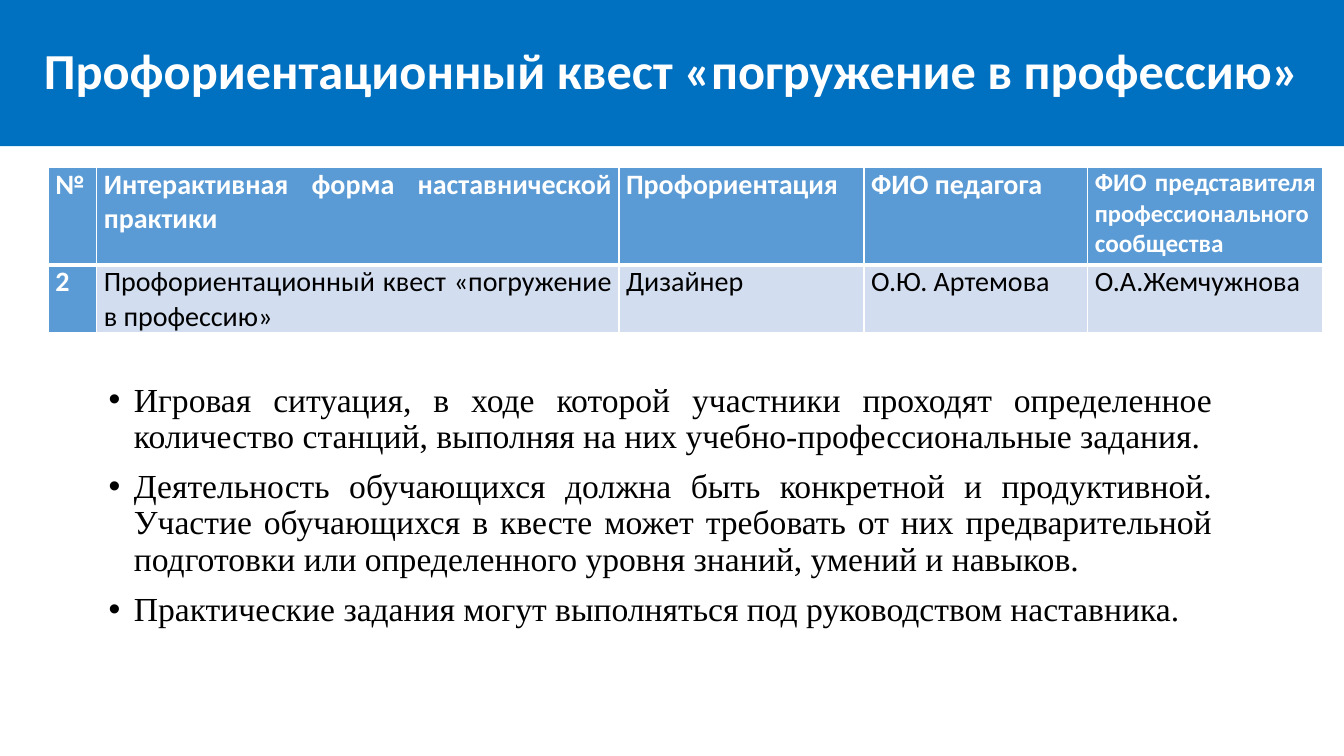
from lxml.etree import SubElement
from pptx import Presentation
from pptx.dml.color import RGBColor
from pptx.enum.shapes import MSO_SHAPE
from pptx.enum.text import MSO_ANCHOR, PP_ALIGN
from pptx.oxml.ns import qn
from pptx.util import Inches, Pt

HEADING = "Профориентационный квест «погружение в профессию»"
COLUMNS = [
    ("№", 0.48),
    ("Интерактивная форма наставнической практики", 5.18),
    ("Профориентация", 2.43),
    ("ФИО педагога", 2.22),
    ([("ФИО представителя ", 18), ("профессионального", 17.5), (" сообщества", 18)], 2.33),
]
QUEST = ["2", HEADING, "Дизайнер", "О.Ю. Артемова", "О.А.Жемчужнова "]
ROW_HEIGHTS = [0.97, 0.65]
POINTS = [
    "Игровая ситуация, в ходе которой участники проходят определенное количество станций, "
    "выполняя на них учебно-профессиональные задания. ",
    "Деятельность обучающихся должна быть конкретной и продуктивной. Участие обучающихся "
    "в квесте может требовать от них предварительной подготовки или определенного уровня "
    "знаний, умений и навыков. ",
    "Практические задания могут выполняться под руководством наставника.",
]
BANNER_BLUE, HEADER_BLUE, PALE_BLUE = "0070C0", "5B9BD5", "D2DEEF"
WHITE, BLACK = "FFFFFF", "000000"


def paint(fill, color):
    fill.solid()
    fill.fore_color.rgb = RGBColor.from_string(color)


def write(paragraph, text, size=20, font="Calibri", color=BLACK, bold=False,
          align=PP_ALIGN.JUSTIFY, spacing=None, before=None, bullet=False):
    paragraph.alignment = align
    if spacing:
        paragraph.line_spacing = spacing
    if before:
        paragraph.space_before = Pt(before)
    if bullet:
        props = paragraph._p.get_or_add_pPr()
        props.set("marL", str(Inches(0.25)))
        props.set("indent", str(Inches(-0.25)))
        SubElement(props, qn("a:buFont"), typeface="Arial")
        SubElement(props, qn("a:buChar"), char="•")
    parts = [(text, size)] if isinstance(text, str) else text
    for words, points in parts:
        run = paragraph.add_run()
        run.text = words
        run.font.size = Pt(points)
        run.font.name = font
        run.font.bold = bold
        run.font.color.rgb = RGBColor.from_string(color)


def border(cell, **widths):
    props = cell._tc.get_or_add_tcPr()
    for side, width in widths.items():
        edge = SubElement(props, qn(f"a:ln{side}"), w=str(Pt(width)))
        SubElement(SubElement(edge, qn("a:solidFill")), qn("a:srgbClr"), val=WHITE)


def add_banner(slide, width):
    banner = slide.shapes.add_shape(MSO_SHAPE.RECTANGLE, 0, 0, width, Inches(1.45))
    banner.shadow.inherit = False
    paint(banner.fill, BANNER_BLUE)
    banner.line.fill.background()
    banner.text_frame.word_wrap = True
    banner.text_frame.vertical_anchor = MSO_ANCHOR.MIDDLE
    write(banner.text_frame.paragraphs[0], HEADING, size=36, color=WHITE, bold=True,
          align=PP_ALIGN.CENTER, spacing=0.9)


def add_quest_table(slide):
    rows = [[label for label, _ in COLUMNS], QUEST]
    table = slide.shapes.add_table(
        len(rows), len(COLUMNS), Inches(0.48), Inches(1.66),
        Inches(sum(width for _, width in COLUMNS)), Inches(sum(ROW_HEIGHTS))).table
    for column, (_, width) in zip(table.columns, COLUMNS):
        column.width = Inches(width)
    for r, (row, height) in enumerate(zip(rows, ROW_HEIGHTS)):
        table.rows[r].height = Inches(height)
        for c, text in enumerate(row):
            cell = table.cell(r, c)
            heading = r == 0 or c == 0
            cell.margin_left = cell.margin_right = Inches(0.07)
            cell.margin_top = cell.margin_bottom = 0
            border(cell, L=1, R=1, T=3 if r else 1, B=1 if r else 3)
            paint(cell.fill, HEADER_BLUE if heading else PALE_BLUE)
            write(cell.text_frame.paragraphs[0], text, bold=heading,
                  color=WHITE if heading else BLACK)


def add_points(slide):
    frame = slide.shapes.add_textbox(
        Inches(0.98), Inches(3.75), Inches(11.14), Inches(3.38)).text_frame
    frame.word_wrap = True
    for i, point in enumerate(POINTS):
        paragraph = frame.add_paragraph() if i else frame.paragraphs[0]
        write(paragraph, point, size=24, font="Times New Roman",
              spacing=0.9, before=10, bullet=True)


def main():
    deck = Presentation()
    deck.slide_width, deck.slide_height = Inches(13.33), Inches(7.5)
    slide = deck.slides.add_slide(deck.slide_layouts[6])
    add_banner(slide, deck.slide_width)
    add_points(slide)
    add_quest_table(slide)
    deck.save("out.pptx")


if __name__ == "__main__":
    main()
